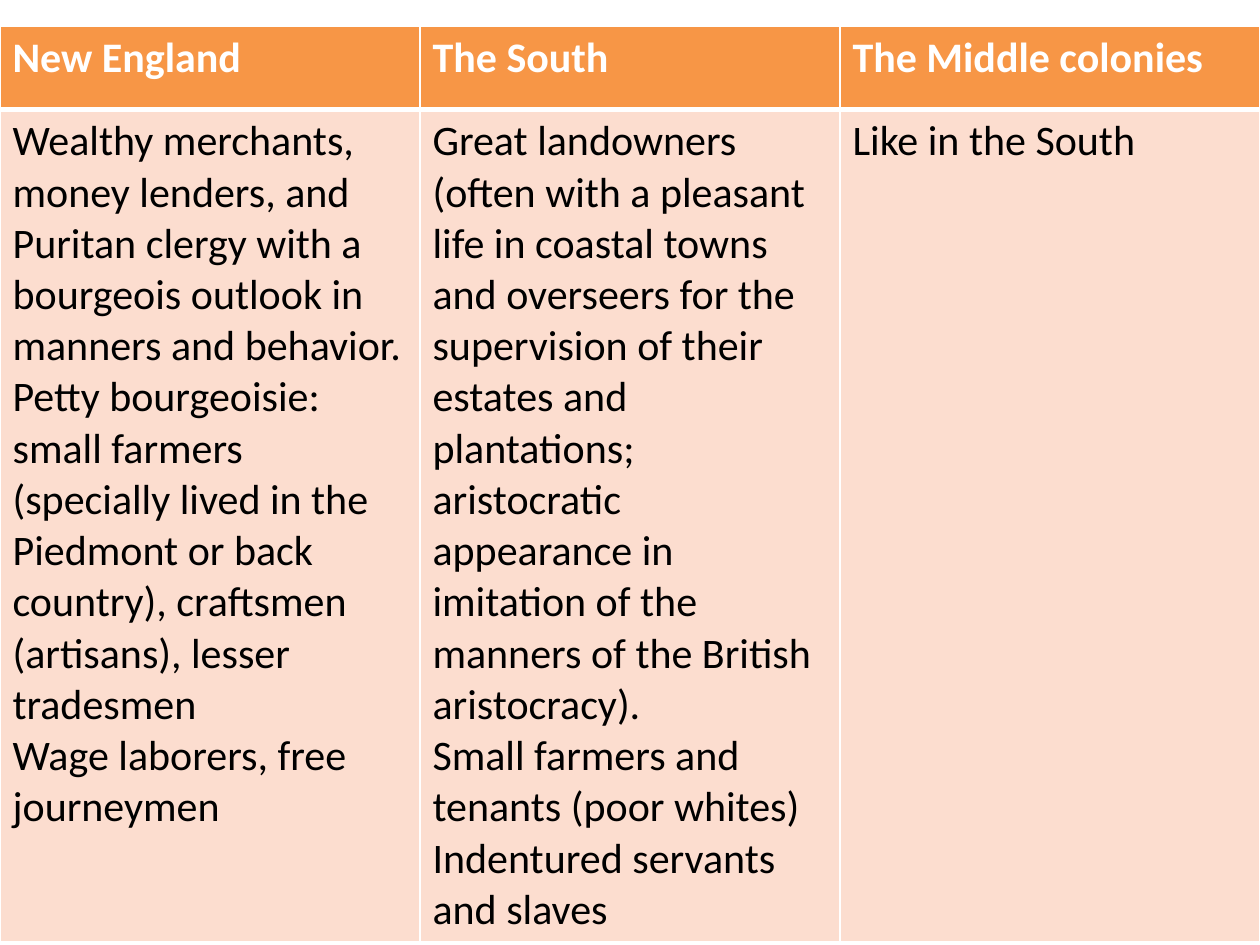
"""Build a slide with a table comparing social classes in three groups of colonies."""
from lxml import etree
from pptx import Presentation
from pptx.dml.color import RGBColor
from pptx.oxml.ns import qn
from pptx.util import Inches, Pt

WHITE, BLACK, ORANGE, PEACH = "FFFFFF", "000000", "F79646", "FCDDCF"
THIN, THICK = 1, 3
WIDTH, HEIGHT, TABLE_TOP = 10, 7.5, 0.21
ROW_HEIGHTS = (0.66, 6.51)

COLONIES = {
    "New England": [
        "Wealthy merchants, money lenders, and Puritan clergy with a bourgeois "
        "outlook in manners and behavior.",
        "Petty bourgeoisie: small farmers (specially lived in the Piedmont or back "
        "country), craftsmen (artisans), lesser tradesmen",
        "Wage laborers, free journeymen",
    ],
    "The South": [
        "Great landowners (often with a pleasant life in coastal towns and overseers "
        "for the supervision of their estates and plantations; aristocratic appearance "
        "in imitation of the manners of the British aristocracy).",
        "Small farmers and tenants (poor whites)",
        "Indentured servants and slaves",
    ],
    "The Middle colonies": ["Like in the South"],
}


def color(value):
    return RGBColor.from_string(value)


def set_borders(cell, top, bottom):
    properties = cell._tc.get_or_add_tcPr()
    for side, points in (("L", THIN), ("R", THIN), ("T", top), ("B", bottom)):
        line = etree.SubElement(properties, qn(f"a:ln{side}"), w=str(Pt(points)))
        fill = etree.SubElement(line, qn("a:solidFill"))
        etree.SubElement(fill, qn("a:srgbClr"), val=WHITE)


def fill_cell(cell, lines, background, ink, bold, top, bottom):
    set_borders(cell, top, bottom)
    cell.fill.solid()
    cell.fill.fore_color.rgb = color(background)
    cell.text = "\n".join(lines)
    for para in cell.text_frame.paragraphs:
        font = para.font
        font.name, font.size, font.bold = "Calibri", Pt(24), bold
        font.color.rgb = color(ink)


def main():
    deck = Presentation()
    deck.slide_width, deck.slide_height = Inches(WIDTH), Inches(HEIGHT)
    page = deck.slides.add_slide(deck.slide_layouts[6])
    table = page.shapes.add_table(
        len(ROW_HEIGHTS), len(COLONIES), 0, Inches(TABLE_TOP),
        Inches(WIDTH), Inches(sum(ROW_HEIGHTS))).table
    for row, height in zip(table.rows, ROW_HEIGHTS):
        row.height = Inches(height)
    for column, (colony, classes) in enumerate(COLONIES.items()):
        fill_cell(table.cell(0, column), [colony], ORANGE, WHITE, True, THIN, THICK)
        fill_cell(table.cell(1, column), classes, PEACH, BLACK, False, THICK, THIN)
    deck.save("out.pptx")


if __name__ == "__main__":
    main()
